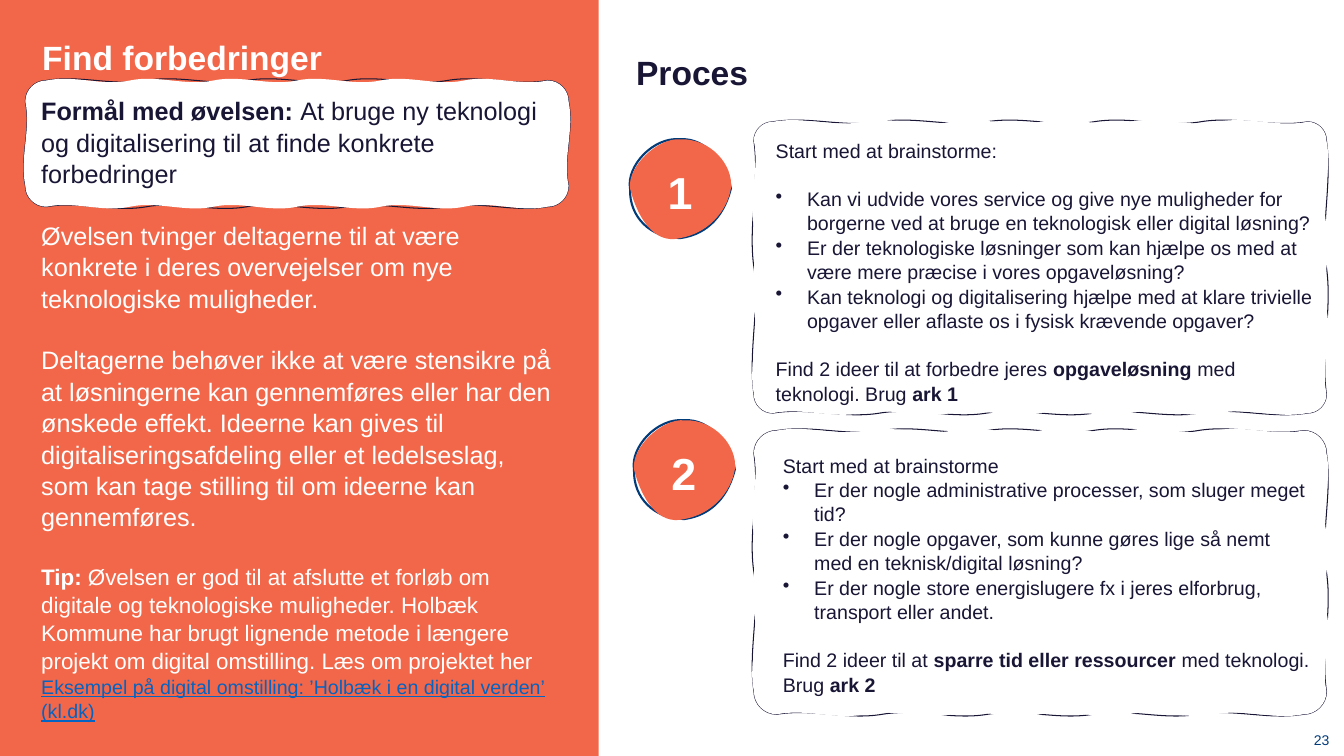
from copy import deepcopy

from lxml import etree
from pptx import Presentation
from pptx.dml.color import RGBColor
from pptx.enum.shapes import MSO_SHAPE
from pptx.enum.text import MSO_ANCHOR, MSO_AUTO_SIZE, PP_ALIGN
from pptx.oxml.ns import qn
from pptx.util import Cm, Pt

TOP, MIDDLE, BOTTOM = MSO_ANCHOR.TOP, MSO_ANCHOR.MIDDLE, MSO_ANCHOR.BOTTOM
LEFT, CENTER, RIGHT = PP_ALIGN.LEFT, PP_ALIGN.CENTER, PP_ALIGN.RIGHT
ORANGE, WHITE, INK, BLUE, LINK = "F26749", "FFFFFF", "181535", "003B7A", "0563C1"
LINE_SPACING = 1.04
INDENT, BULLET_HANG = 1.27, 0.79

# A run is (text, format); a paragraph is (kind, space before in points, runs).
TITLE = "Find forbedringer"
HEADING = "Proces"
PAGE_NUMBER = "23"
BODY = {"size": 14, "color": INK}
BOLD = {**BODY, "bold": True}
INTRO = {"size": 18, "color": WHITE}
TIP = {"size": 16, "color": WHITE}
PURPOSE = {"size": 18, "color": INK}

INTRO_TEXT = [
    ("plain", 0, [
        ("Formål med øvelsen: ", {**PURPOSE, "bold": True}),
        ("At bruge ny teknologi og digitalisering til at finde konkrete forbedringer", PURPOSE)]),
    ("plain", 21.5, [
        ("Øvelsen tvinger deltagerne til at være konkrete i deres overvejelser om nye "
         "teknologiske muligheder.", INTRO)]),
    ("plain", 21.5, [
        ("Deltagerne behøver ikke at være stensikre på at løsningerne kan gennemføres eller har "
         "den ønskede effekt. Ideerne kan gives til digitaliseringsafdeling eller et ledelseslag, "
         "som kan tage stilling til om ideerne kan gennemføres.", INTRO)]),
    ("plain", 21.5, [
        ("Tip: ", {**TIP, "bold": True}),
        ("Øvelsen er god til at afslutte et forløb om digitale og teknologiske muligheder. "
         "Holbæk Kommune har brugt lignende metode i længere projekt om digital omstilling. "
         "Læs om projektet her ", TIP),
        ("Eksempel på digital omstilling: ’Holbæk i en digital verden’ (kl.dk)",
         {"size": 14, "color": LINK, "underline": True})]),
]
STEP_1 = [
    ("plain", 0, [("Start med at brainstorme:", BODY)]),
    ("bullet", 16.8, [
        ("Kan vi udvide vores service og give nye muligheder for borgerne ved at bruge en "
         "teknologisk eller digital løsning?", BODY)]),
    ("bullet", 0, [
        ("Er der teknologiske løsninger som kan hjælpe os med at være mere præcise i vores "
         "opgaveløsning?", BODY)]),
    ("bullet", 0, [
        ("Kan teknologi og digitalisering hjælpe med at klare trivielle opgaver eller aflaste os "
         "i fysisk krævende opgaver?", BODY)]),
    ("plain", 16.8, [
        ("Find 2 ideer til at forbedre jeres ", BODY), ("opgaveløsning", BOLD),
        (" med teknologi. Brug ", BODY), ("ark 1", BOLD)]),
]
STEP_2 = [
    ("plain", 0, [("Start med at brainstorme", BODY)]),
    ("bullet", 0, [("Er der nogle administrative processer, som sluger meget tid?", BODY)]),
    ("bullet", 0, [
        ("Er der nogle opgaver, som kunne gøres lige så nemt med en teknisk/digital løsning?",
         BODY)]),
    ("bullet", 0, [
        ("Er der nogle store energislugere fx i jeres elforbrug, transport eller andet.", BODY)]),
    ("plain", 16.8, [
        ("Find 2 ideer til at ", BODY), ("sparre tid eller ressourcer ", BOLD),
        ("med teknologi. Brug ", BODY), ("ark 2", BOLD)]),
]

# Boxes are (left, top, width, height) in centimetres.
PURPOSE_CARD = ((0.64, 2.03, 13.69, 3.18), 0.53)
STEPS = [  # number, badge corner, card box, card corner radius, text box, text
    ("1", (15.88, 3.51), (19, 3.07, 14.43, 7.34), 0.48, (18.03, 3.35, 15.47, 9.25), STEP_1),
    ("2", (15.98, 10.59), (19, 10.85, 14.43, 7.15), 0.58, (18.21, 11.28, 15.09, 6.83), STEP_2),
]
BADGE_SIZE = 2.54
# Contours list a start point, then two control points and an end point per curve.
BADGE_OUTLINE = [(0, .49), (-.04, .27), (.23, -.03), (.5, 0), (.75, -.02), (.97, .25), (1, .49),
                 (.94, .73), (.79, .94), (.5, .98), (.2, .98), (-.01, .77), (0, .49)]
BADGE_FILL = [(0, .49), (-.03, .27), (.28, -.02), (.5, 0), (.8, -.01), (1.03, .26), (1, .49),
              (.96, .72), (.77, .93), (.5, .98), (.23, 1.05), (.07, .76), (0, .49)]
SIDES = [(1, 0), (0, 1), (-1, 0), (0, -1)]  # directions, clockwise from the top side
ROUNDING = 0.55


def rgb(color):
    return RGBColor.from_string(color)


def fill_text(shape, paragraphs, anchor=TOP, align=LEFT, margin=None):
    frame = shape.text_frame
    settings = {"word_wrap": True, "auto_size": MSO_AUTO_SIZE.NONE, "vertical_anchor": anchor}
    if margin is not None:
        settings |= {f"margin_{side}": margin for side in ("left", "top", "right", "bottom")}
    for name, value in settings.items():
        setattr(frame, name, value)
    for i, (kind, before, runs) in enumerate(paragraphs):
        paragraph = frame.add_paragraph() if i else frame.paragraphs[0]
        properties = paragraph._p.get_or_add_pPr()
        if kind == "bullet":
            etree.SubElement(properties, qn("a:buChar")).set("char", "•")
            properties.set("marL", str(Cm(INDENT + BULLET_HANG)))
            properties.set("indent", str(-Cm(BULLET_HANG)))
        elif kind == "plain":
            properties.set("marL", str(Cm(INDENT)))
        layout = {"alignment": align, "line_spacing": LINE_SPACING, "space_before": Pt(before)}
        for name, value in layout.items():
            setattr(paragraph, name, value)
        for text, style in runs:
            run = paragraph.add_run()
            run.text = text
            font = {"name": "Arial", "bold": False, **style, "size": Pt(style["size"])}
            run.font.color.rgb = rgb(font.pop("color"))
            for name, value in font.items():
                setattr(run.font, name, value)


def add_text(slide, box, paragraphs, **layout):
    fill_text(slide.shapes.add_textbox(*map(Cm, box)), paragraphs, **layout)


def label(text, size, color, bold=True):
    """One unindented paragraph in one format."""
    return [("label", 0, [(text, {"size": size, "color": color, "bold": bold})])]


def card_contour(box, radius, wavelength, swing=0.15):
    """Rounded rectangle whose straight sides wave gently."""
    x, y, width, height = box
    x += radius
    points = [(x, y)]
    for side, (dx, dy) in enumerate(SIDES):
        length = (height if side % 2 else width) - 2 * radius
        waves = round(length / wavelength)
        step = length / waves
        for _ in range(waves):
            for along, out in ((step / 3, swing), (step * 2 / 3, -swing), (step, 0)):
                points.append((x + dx * along + dy * out, y + dy * along - dx * out))
            x, y = points[-1]
        next_dx, next_dy = SIDES[(side + 1) % 4]
        for along, turn in ((ROUNDING, 0), (1, 1 - ROUNDING), (1, 1)):
            points.append((x + radius * (dx * along + next_dx * turn),
                           y + radius * (dy * along + next_dy * turn)))
        x, y = points[-1]
    return points


def badge_contour(corner, contour):
    return [(corner[0] + BADGE_SIZE * x, corner[1] + BADGE_SIZE * y) for x, y in contour]


def bend(contour):
    """Turn each three line segments of a contour into one cubic curve."""
    lines = contour.findall(qn("a:lnTo"))
    for first in range(0, len(lines), 3):
        curve = etree.Element(qn("a:cubicBezTo"))
        lines[first].addprevious(curve)
        for line in lines[first:first + 3]:
            curve.append(line[0])
            contour.remove(line)


def add_sketch(slide, outline, filling, fill, line, line_width):
    """Hand-drawn shape: a stroked contour with a separate filled one over it."""
    outline, filling = ([(Cm(x), Cm(y)) for x, y in c] for c in (outline, filling))
    builder = slide.shapes.build_freeform(*outline[0])
    builder.add_line_segments(outline[1:])
    builder.move_to(*filling[0])
    builder.add_line_segments(filling[1:])
    shape = builder.convert_to_shape()
    stroked = shape._element.xpath(".//a:path")[0]
    filled = deepcopy(stroked)
    stroked.addnext(filled)
    split = stroked.index(stroked.findall(qn("a:moveTo"))[1])
    for contour, surplus in ((stroked, stroked[split:]), (filled, filled[:split])):
        for part in surplus:
            contour.remove(part)
        bend(contour)
    stroked.set("fill", "none")
    filled.set("stroke", "0")
    shape.shadow.inherit = False
    shape.fill.solid()
    shape.fill.fore_color.rgb = rgb(fill)
    shape.line.color.rgb = rgb(line)
    shape.line.width = Pt(line_width)
    return shape


def add_card(slide, box, radius):
    add_sketch(slide, card_contour(box, radius, 2.6), card_contour(box, radius, 2.1),
               WHITE, INK, 0.75)


def main():
    deck = Presentation()
    deck.slide_width, deck.slide_height = Cm(33.87), Cm(19.05)
    slide = deck.slides.add_slide(deck.slide_layouts[5])
    panel = slide.shapes.add_shape(MSO_SHAPE.RECTANGLE, 0, 0, Cm(15.09), deck.slide_height)
    panel.shadow.inherit = False
    panel.fill.solid()
    panel.fill.fore_color.rgb = rgb(ORANGE)
    panel.line.fill.background()
    title = slide.shapes.title
    title._element.addprevious(panel._element)
    title.left, title.top, title.width, title.height = map(Cm, (0.81, 0.71, 20.52, 1.42))
    fill_text(title, label(TITLE, 24, WHITE), anchor=MIDDLE)
    add_text(slide, (16.03, 1.27, 5.92, 0.99), label(HEADING, 24, INK), margin=0)
    for number, corner, card, radius, text_box, text in STEPS:
        add_card(slide, card, radius)
        badge = add_sketch(slide, badge_contour(corner, BADGE_OUTLINE),
                           badge_contour(corner, BADGE_FILL), ORANGE, BLUE, 1.5)
        fill_text(badge, label(number, 32, WHITE), anchor=MIDDLE, align=CENTER)
        add_text(slide, text_box, text)
    add_card(slide, *PURPOSE_CARD)
    add_text(slide, (-0.48, 2.26, 14.73, 16.66), INTRO_TEXT)
    add_text(slide, (31.95, 17.63, 1.55, 1.22), label(PAGE_NUMBER, 10, BLUE, bold=False),
             anchor=BOTTOM, align=RIGHT, margin=0)
    deck.save("out.pptx")


if __name__ == "__main__":
    main()
